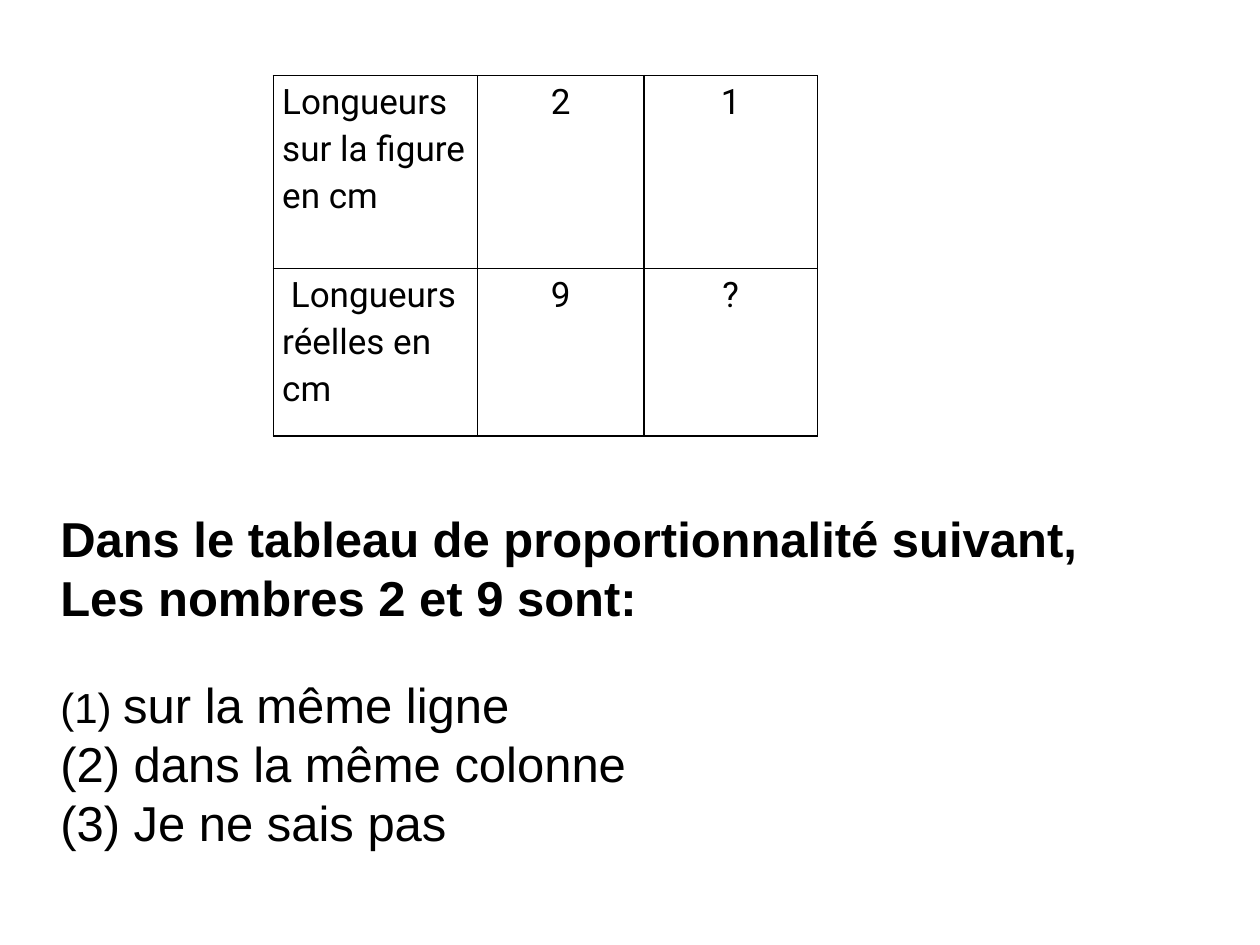
"""Build a quiz slide: a proportionality table, a question and numbered answers."""
from dataclasses import dataclass

from lxml import etree
from pptx import Presentation
from pptx import util as u
from pptx.dml.color import RGBColor
from pptx.enum import text
from pptx.oxml import ns

LENGTHS = [
    ["Longueurs sur la figure en cm", "2", "1"],
    [" Longueurs réelles en cm", "9", "?"],
]
COLUMN_WIDTHS = [1.62, 1.32, 1.38]
ROW_HEIGHTS = [1.53, 1.33]
QUESTION = ["Dans le tableau de proportionnalité suivant,", "Les nombres 2 et 9 sont:"]
ANSWERS = [
    [(" ", "small"), ("sur la même ligne", "body")],
    [(" dans la même colonne", "body")],
    [(" Je ne sais pas", "body")],
]


@dataclass(frozen=True)
class Theme:
    ink = RGBColor(0, 0, 0)
    paper = RGBColor(255, 255, 255)
    table_font = "Roboto"
    text_font = "Arial"
    sizes = {"table": 20, "small": 24, "body": 28}
    line = 1
    cell_inset = 0.07
    answer_indent = 0.38
    answer_gap = 27.6


THEME = Theme()


def add_run(paragraph, words, size, font, bold=False):
    run = paragraph.add_run()
    run.text = words
    run.font.name = font
    run.font.size = u.Pt(THEME.sizes[size])
    run.font.bold = bold
    run.font.color.rgb = THEME.ink


def add_borders(cell):
    properties = cell._tc.get_or_add_tcPr()
    for position, side in enumerate(("lnL", "lnR", "lnT", "lnB")):
        border = etree.Element(ns.qn(f"a:{side}"), w=str(u.Pt(THEME.line)))
        fill = etree.SubElement(border, ns.qn("a:solidFill"))
        etree.SubElement(fill, ns.qn("a:srgbClr"), val=str(THEME.ink))
        properties.insert(position, border)


def add_lengths(slide):
    frame = slide.shapes.add_table(
        len(ROW_HEIGHTS), len(COLUMN_WIDTHS), u.Inches(2.17), u.Inches(0.6),
        u.Inches(sum(COLUMN_WIDTHS)), u.Inches(sum(ROW_HEIGHTS)))
    table = frame.table
    table.first_row = table.horz_banding = False
    for column, width in zip(table.columns, COLUMN_WIDTHS):
        column.width = u.Inches(width)
    for row, height, entries in zip(table.rows, ROW_HEIGHTS, LENGTHS):
        row.height = u.Inches(height)
        for index, (cell, entry) in enumerate(zip(row.cells, entries)):
            cell.fill.background()
            cell.margin_left = cell.margin_right = u.Inches(THEME.cell_inset)
            cell.margin_top = cell.margin_bottom = 0
            paragraph = cell.text_frame.paragraphs[0]
            paragraph.line_spacing = 1.15
            paragraph.alignment = text.PP_ALIGN.CENTER if index else text.PP_ALIGN.LEFT
            add_run(paragraph, entry, "table", THEME.table_font)
            add_borders(cell)


def number_answer(paragraph):
    properties = paragraph._p.get_or_add_pPr()
    indent = u.Inches(THEME.answer_indent)
    properties.set("marL", str(indent))
    properties.set("indent", str(-indent))
    etree.SubElement(properties, ns.qn("a:buFont"), typeface=THEME.text_font)
    etree.SubElement(properties, ns.qn("a:buAutoNum"), type="arabicParenBoth")


def add_quiz(slide):
    box = slide.shapes.add_textbox(
        u.Inches(0.38), u.Inches(3.99), u.Inches(9.29), u.Inches(2.86))
    frame = box.text_frame
    frame.word_wrap = True
    frame.auto_size = text.MSO_AUTO_SIZE.SHAPE_TO_FIT_TEXT
    for index, line in enumerate(QUESTION):
        paragraph = frame.add_paragraph() if index else frame.paragraphs[0]
        add_run(paragraph, line, "body", THEME.text_font, bold=True)
    for index, answer in enumerate(ANSWERS):
        paragraph = frame.add_paragraph()
        paragraph.space_before = u.Pt(0 if index else THEME.answer_gap)
        number_answer(paragraph)
        for words, size in answer:
            add_run(paragraph, words, size, THEME.text_font)


def main():
    deck = Presentation()
    deck.slide_width, deck.slide_height = u.Inches(10), u.Inches(7.5)
    slide = deck.slides.add_slide(deck.slide_layouts.get_by_name("Blank"))
    slide.background.fill.solid()
    slide.background.fill.fore_color.rgb = THEME.paper
    add_lengths(slide)
    add_quiz(slide)
    deck.save("out.pptx")


if __name__ == "__main__":
    main()
